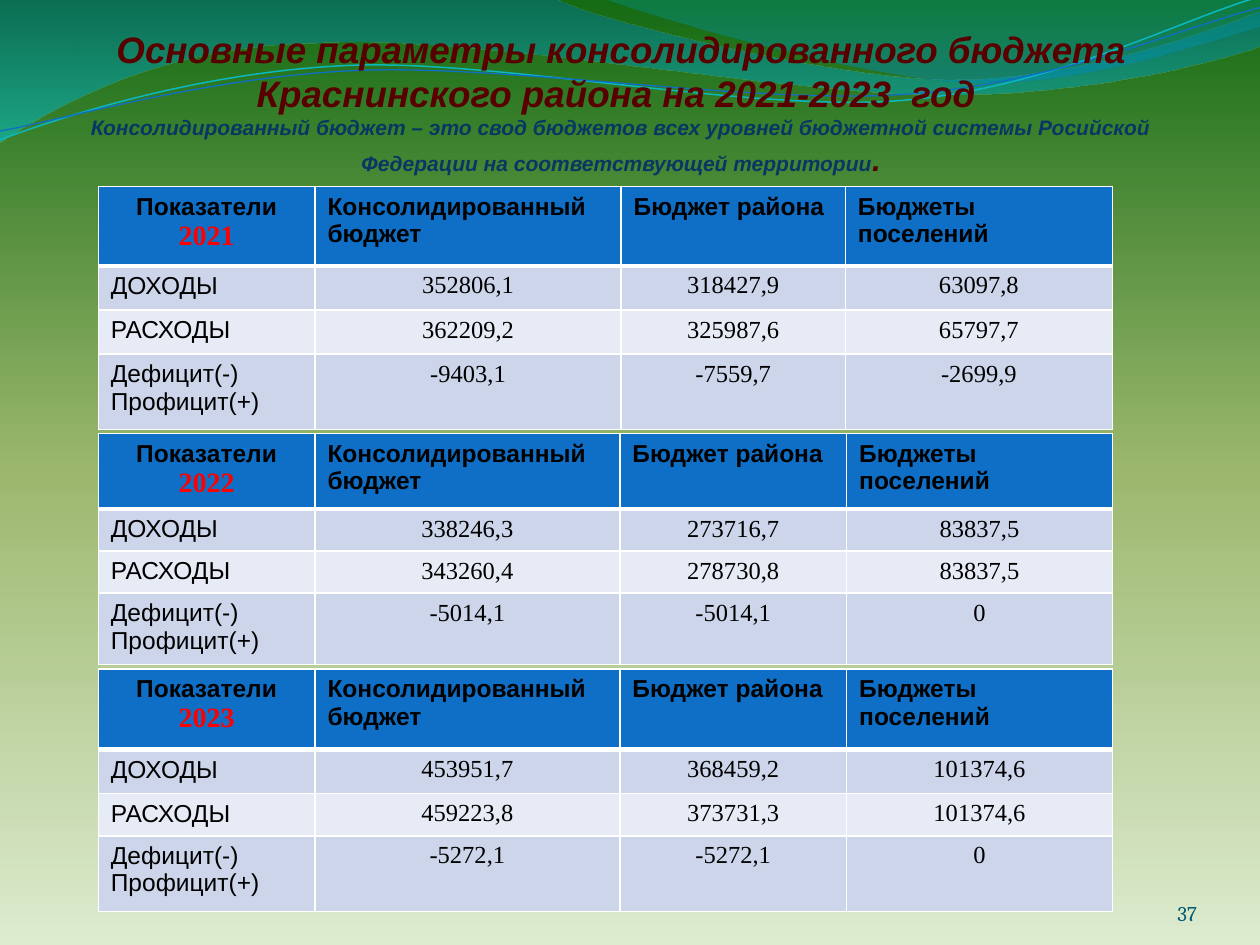
from collections import namedtuple

from lxml.etree import SubElement
from pptx import Presentation
from pptx.dml.color import RGBColor
from pptx.enum.text import MSO_ANCHOR as Anchor, PP_ALIGN as Align
from pptx.oxml.ns import qn
from pptx.util import Inches, Pt

Box = namedtuple("Box", "left top width height")

WHITE = RGBColor(0xFF, 0xFF, 0xFF)
BLACK = RGBColor(0x00, 0x00, 0x00)
RED = RGBColor(0xFF, 0x00, 0x00)
MAROON = RGBColor(0x58, 0x00, 0x00)
NAVY = RGBColor(0x08, 0x37, 0x63)
BLUE = RGBColor(0x0F, 0x6F, 0xC6)
CYAN = RGBColor(0x0A, 0xB8, 0xBF)
PETROL = RGBColor(0x04, 0x5D, 0x75)
ROW_DARK = RGBColor(0xCC, 0xD5, 0xEA)
ROW_LIGHT = RGBColor(0xE7, 0xEB, 0xF5)

# Gradient stops: position, colour, opacity in percent
PAGE_STOPS = [(0, RGBColor(0xDD, 0xEB, 0xCF), 100),
              (50, RGBColor(0x9C, 0xB8, 0x6E), 100),
              (100, RGBColor(0x15, 0x6B, 0x13), 100)]
LEFT_STOPS = [(0, RGBColor(0x00, 0x74, 0xA1), 45),
              (100, RGBColor(0x00, 0xC6, 0xCF), 55)]
RIGHT_STOPS = [(0, RGBColor(0x00, 0xA1, 0xA9), 30),
               (80, RGBColor(0x00, 0x8B, 0xBF), 45)]

# Outlines: a start point, then steps of one point (line) or three (curve)
LEFT_WAVE = [[(0, -0.01)], [(4.4, -0.01)],
             [(4.76, 0.17), (6.64, 0.63), (7.58, 0.63)],
             [(8.53, 0.63), (9.58, 0.26), (10, 0.09)],
             [(10.01, 0.36)],
             [(9.83, 0.44), (8.7, 0.76), (7.46, 0.75)],
             [(6.22, 0.75), (3.82, 0.28), (2.57, 0.34)],
             [(1.29, 0.35), (0.46, 0.83), (-0.01, 1.13)],
             [(0, -0.01)]]
RIGHT_WAVE = [[(4.79, -0.01)],
              [(5.09, 0.11), (6.82, 0.62), (7.69, 0.65)],
              [(8.56, 0.69), (9.61, 0.32), (10, 0.21)],
              [(10, 0)], [(4.79, -0.01)]]
CYAN_LINE = [[(0, 1.11)],
             [(0.48, 0.93), (1.58, 0.57), (2.77, 0.52)],
             [(3.95, 0.47), (5.93, 0.89), (7.13, 0.8)],
             [(8.33, 0.71), (9.38, 0.15), (9.98, -0.02)]]
BLUE_LINE = [[(0, 1.04)],
             [(0.47, 0.96), (1.64, 0.61), (2.83, 0.56)],
             [(4.03, 0.51), (5.97, 0.83), (7.17, 0.75)],
             [(8.36, 0.67), (9.41, 0.21), (10, 0.06)]]

HEADINGS = ["Консолидированный бюджет", "Бюджет района", "Бюджеты поселений"]
ROW_NAMES = [["ДОХОДЫ"], ["РАСХОДЫ"], ["Дефицит(-)", "Профицит(+)"]]

# Year, top, height, column widths, least row heights, values
BUDGETS = [
    ("2021", 1.48, 1.93, [1.72, 2.43, 1.78, 2.12], [0.63, 0.35, 0.35, 0.6],
     [["352806,1", "318427,9", "63097,8"],
      ["362209,2", "325987,6", "65797,7"],
      ["-9403,1", "-7559,7", "-2699,9"]]),
    ("2023", 5.31, 1.92, [1.72, 2.42, 1.8, 2.11], [0.64, 0.35, 0.18, 0.6],
     [["453951,7", "368459,2", "101374,6"],
      ["459223,8", "373731,3", "101374,6"],
      ["-5272,1", "-5272,1", "0"]]),
    ("2022", 3.44, 1.83, [1.72, 2.42, 1.8, 2.11], [0.55, 0.25, 0.32, 0.4],
     [["338246,3", "273716,7", "83837,5"],
      ["343260,4", "278730,8", "83837,5"],
      ["-5014,1", "-5014,1", "0"]]),
]

HEAD = {"name": "Arial", "size": Pt(14), "bold": True, "color": BLACK}
LABEL = {**HEAD, "bold": False}
VALUE = {**LABEL, "name": "Times New Roman"}
YEAR = {**HEAD, "name": "Times New Roman", "size": Pt(16), "color": RED}
TITLE = {**HEAD, "size": Pt(21), "italic": True, "color": MAROON}
SUBTITLE = {**TITLE, "size": Pt(12), "color": NAVY}
FULL_STOP = {**TITLE, "size": Pt(18)}
NUMBER = {"name": "Cambria", "size": Pt(12), "color": PETROL}


def write(frame, paragraphs, align):
    """Fill a text frame; each paragraph is a list of (text, format) spans."""
    for index, spans in enumerate(paragraphs):
        para = frame.add_paragraph() if index else frame.paragraphs[0]
        para.alignment = align
        for text, style in spans:
            span = para.add_run()
            span.text = text
            for key, value in style.items():
                if key == "color":
                    span.font.color.rgb = value
                else:
                    setattr(span.font, key, value)


def add_text(page, box, paragraphs, align, top_inset=0):
    frame = page.shapes.add_textbox(*map(Inches, box)).text_frame
    settings = {"word_wrap": True, "vertical_anchor": Anchor.BOTTOM,
                "margin_left": 0, "margin_right": 0,
                "margin_top": Inches(top_inset), "margin_bottom": 0}
    for key, value in settings.items():
        setattr(frame, key, value)
    write(frame, paragraphs, align)


def paint_gradient(fill, element, stops, angle):
    fill.gradient()
    stop_list = element.find(".//" + qn("a:gsLst"))
    stop_list.clear()
    for position, color, opacity in stops:
        stop = SubElement(stop_list, qn("a:gs"), pos=str(position * 1000))
        tint = SubElement(stop, qn("a:srgbClr"), val=str(color))
        if opacity < 100:
            SubElement(tint, qn("a:alpha"), val=str(opacity * 1000))
    element.find(".//" + qn("a:lin")).set("ang", str(angle * 60000))


def add_outline(page, box, outline, closed):
    points = [(Inches(box.left + x), Inches(box.top + y)) for step in outline for x, y in step]
    builder = page.shapes.build_freeform(*points[0])
    builder.add_line_segments(points[1:], close=closed)
    shape = builder.convert_to_shape()
    shape.shadow.inherit = False
    # Join each three points of a curve into one cubic segment
    segments = iter(shape.element.findall(".//" + qn("a:lnTo")))
    for step in outline[1:]:
        first, *others = [next(segments) for _ in step]
        if others:
            first.tag = qn("a:cubicBezTo")
            for segment in others:
                first.append(segment[0])
                segment.getparent().remove(segment)
    return shape


def add_waves(page, box):
    for outline, stops in [(LEFT_WAVE, LEFT_STOPS), (RIGHT_WAVE, RIGHT_STOPS)]:
        wave = add_outline(page, box, outline, True)
        paint_gradient(wave.fill, wave.element, stops, 90)
        wave.line.fill.background()
    for outline, color, width in [(CYAN_LINE, CYAN, 0.85), (BLUE_LINE, BLUE, 0.75)]:
        curve = add_outline(page, box, outline, False)
        curve.fill.background()
        curve.line.color.rgb = color
        curve.line.width = Pt(width)


def style_cell(cell, color, bottom, top):
    properties = cell._tc.get_or_add_tcPr()
    for side, width in [("L", 1), ("R", 1), ("T", top), ("B", bottom)]:
        border = SubElement(properties, qn("a:ln" + side), w=str(Pt(width)))
        paint = SubElement(border, qn("a:solidFill"))
        SubElement(paint, qn("a:srgbClr"), val=str(WHITE))
    cell.fill.solid()
    cell.fill.fore_color.rgb = color


def add_budget(page, box, year, widths, heights, values):
    holder = page.shapes.add_table(len(heights), len(widths), *map(Inches, box))
    table = holder.table
    for column, width in zip(table.columns, widths):
        column.width = Inches(width)
    for row, height in zip(table.rows, heights):
        row.height = Inches(height)
    holder.height = Inches(box.height)
    # Header row
    write(table.cell(0, 0).text_frame, [[("Показатели", HEAD)], [(year, YEAR)]], Align.CENTER)
    for column, heading in enumerate(HEADINGS, 1):
        write(table.cell(0, column).text_frame, [[(heading, HEAD)]], Align.LEFT)
    # Labels and values
    for row, (name, numbers) in enumerate(zip(ROW_NAMES, values), 1):
        write(table.cell(row, 0).text_frame, [[(line, LABEL)] for line in name], Align.LEFT)
        for column, number in enumerate(numbers, 1):
            write(table.cell(row, column).text_frame, [[(number, VALUE)]], Align.CENTER)
    # Fills and borders
    for row, color in enumerate([BLUE, ROW_DARK, ROW_LIGHT, ROW_DARK]):
        for column in range(len(widths)):
            style_cell(table.cell(row, column), color,
                       bottom=3 if row == 0 else 1, top=3 if row == 1 else 1)


def main():
    deck = Presentation()
    deck.slide_width, deck.slide_height = Inches(10), Inches(7.5)
    page = deck.slides.add_slide(deck.slide_layouts[6])
    # Background and waves
    paint_gradient(page.background.fill, page.element, PAGE_STOPS, 270)
    add_waves(page, Box(0, 0, 10, 1.13))
    # Title
    add_text(page, Box(0.62, 0, 8.62, 1.41), [
        [("Основные параметры консолидированного бюджета", TITLE)],
        [("Краснинского района на 2021-2023  год ", TITLE)],
        [("Консолидированный бюджет – это свод бюджетов всех уровней бюджетной системы "
          "Росийской Федерации на соответствующей территории", SUBTITLE), (".", FULL_STOP)],
    ], Align.CENTER, top_inset=0.05)
    # One table for each year
    for year, top, height, widths, heights, values in BUDGETS:
        add_budget(page, Box(0.78, top, sum(widths), height), year, widths, heights, values)
    # Page number
    add_text(page, Box(8.67, 6.95, 0.83, 0.4), [[("37", NUMBER)]], Align.RIGHT)
    deck.save("out.pptx")


if __name__ == "__main__":
    main()
